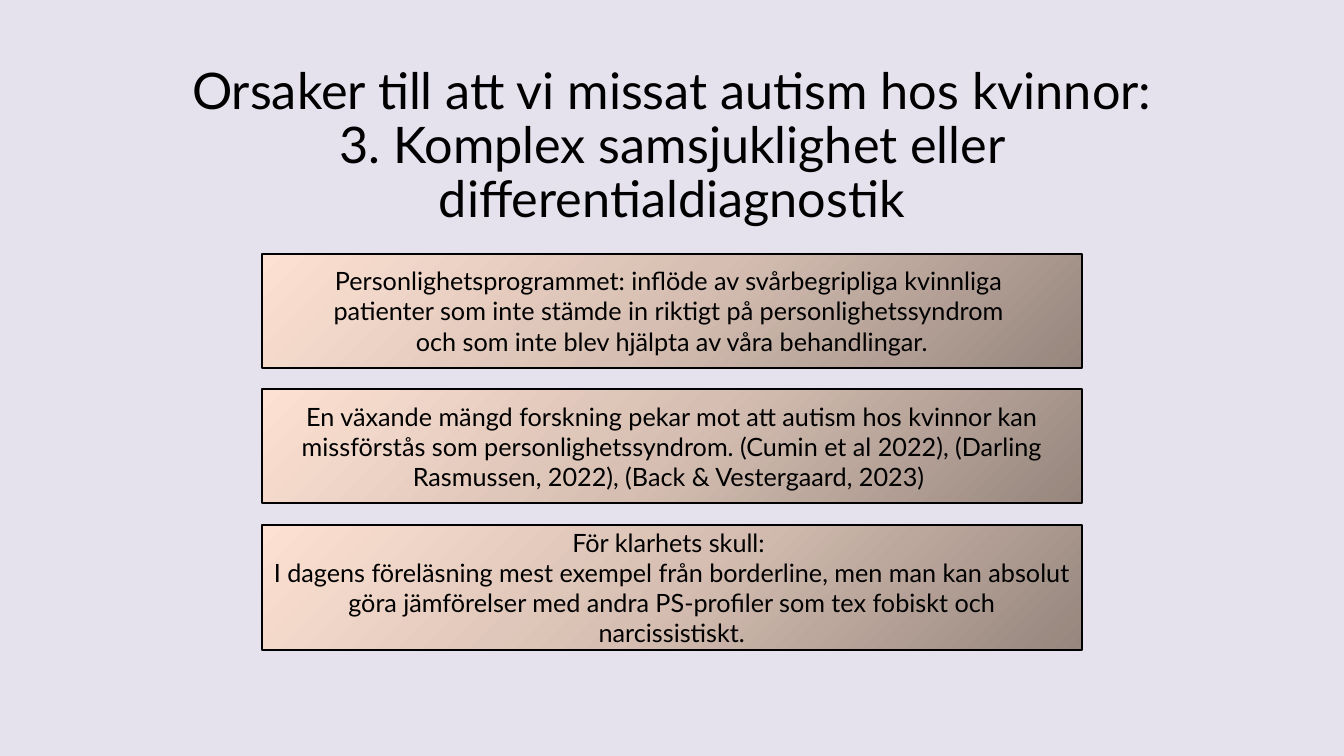
from dataclasses import dataclass

import lxml.etree
import pptx
import pptx.dml.color
import pptx.enum.shapes
import pptx.enum.text
import pptx.oxml.ns
import pptx.slide
import pptx.util
from pptx.util import Pt


@dataclass(frozen=True)
class Theme:
    font: str = "Lato"
    title_size: float = 36
    body_size: float = 18
    background: str = "E5E2EE"
    ink: str = "000000"
    gradient: tuple[tuple[int, str], ...] = (
        (0, "96867D"),
        (50, "D6BEB2"),
        (100, "FDE2D3"),
    )


@dataclass(frozen=True)
class Reason:
    height: float
    paragraphs: tuple[str, ...]


THEME = Theme()
TITLE = (
    "Orsaker till att vi missat autism hos kvinnor:\v"
    "3. Komplex samsjuklighet eller differentialdiagnostik"
)
REASONS = (
    Reason(81.4, (
        "Personlighetsprogrammet: inflöde av svårbegripliga kvinnliga ",
        "patienter som inte stämde in riktigt på personlighetssyndrom ",
        "och som inte blev hjälpta av våra behandlingar.",
    )),
    Reason(81.4, (
        "En växande mängd forskning pekar mot att autism hos kvinnor kan "
        "missförstås som personlighetssyndrom. (Cumin et al 2022), "
        "(Darling Rasmussen, 2022), (Back & Vestergaard, 2023) ",
    )),
    Reason(89.3, (
        "För klarhets skull: ",
        "I dagens föreläsning mest exempel från borderline, men man kan absolut "
        "göra jämförelser med andra PS-profiler som tex fobiskt och "
        "narcissistiskt.",
    )),
)
REASON_LEFT = 187.2
REASON_TOP = 181.4
REASON_WIDTH = 585.4
REASON_PITCH = 96.8


def color(value: str) -> pptx.dml.color.RGBColor:
    return pptx.dml.color.RGBColor.from_string(value)


def format_text(frame, size: float) -> None:
    frame.word_wrap = True
    frame.auto_size = pptx.enum.text.MSO_AUTO_SIZE.NONE
    for paragraph in frame.paragraphs:
        paragraph.alignment = pptx.enum.text.PP_ALIGN.CENTER
        paragraph.font.name = THEME.font
        paragraph.font.size = Pt(size)
        paragraph.font.color.rgb = color(THEME.ink)


def apply_corner_gradient(box) -> None:
    qn = pptx.oxml.ns.qn
    box.fill.gradient()
    gradient = box._element.spPr.find(qn("a:gradFill"))
    for child in list(gradient):
        gradient.remove(child)
    stops = lxml.etree.SubElement(gradient, qn("a:gsLst"))
    for position, value in THEME.gradient:
        stop = lxml.etree.SubElement(stops, qn("a:gs"), pos=str(position * 1000))
        lxml.etree.SubElement(stop, qn("a:srgbClr"), val=value)
    circle = lxml.etree.SubElement(gradient, qn("a:path"), path="circle")
    lxml.etree.SubElement(circle, qn("a:fillToRect"), l="100000", t="100000")


def draw_title(page: pptx.slide.Slide) -> None:
    title = page.shapes.title
    title.left, title.top = Pt(66), Pt(46.8)
    title.width, title.height = Pt(828), Pt(153.4)
    frame = title.text_frame
    frame.text = TITLE
    frame.vertical_anchor = pptx.enum.text.MSO_ANCHOR.TOP
    frame.margin_top = Pt(0)
    format_text(frame, THEME.title_size)
    frame.paragraphs[0].line_spacing = 0.9


def draw_reason(page: pptx.slide.Slide, reason: Reason, top: float) -> None:
    box = page.shapes.add_shape(
        pptx.enum.shapes.MSO_SHAPE.RECTANGLE,
        Pt(REASON_LEFT), Pt(top), Pt(REASON_WIDTH), Pt(reason.height),
    )
    box.shadow.inherit = False
    apply_corner_gradient(box)
    box.line.color.rgb = color(THEME.ink)
    box.line.width = Pt(1.5)
    frame = box.text_frame
    frame.text = "\n".join(reason.paragraphs)
    frame.vertical_anchor = pptx.enum.text.MSO_ANCHOR.MIDDLE
    format_text(frame, THEME.body_size)


def main() -> None:
    deck = pptx.Presentation()
    deck.slide_width, deck.slide_height = Pt(960), Pt(540)
    page = deck.slides.add_slide(deck.slide_layouts.get_by_name("Title Only"))
    page.background.fill.solid()
    page.background.fill.fore_color.rgb = color(THEME.background)
    draw_title(page)
    for index, reason in enumerate(REASONS):
        draw_reason(page, reason, REASON_TOP + index * REASON_PITCH)
    deck.save("out.pptx")


if __name__ == "__main__":
    main()
